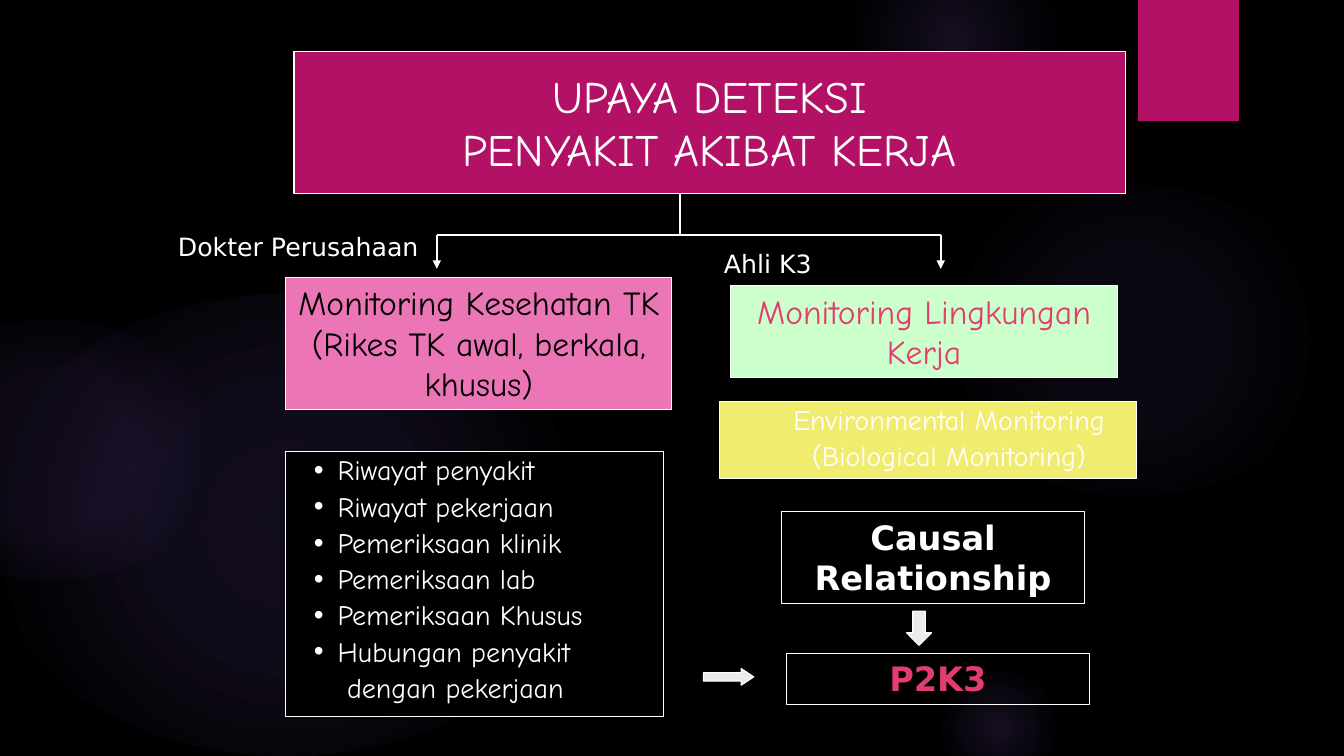
from dataclasses import dataclass
from pptx import Presentation
from pptx.dml.color import RGBColor as RGB
from pptx.enum.shapes import MSO_CONNECTOR as LINE, MSO_SHAPE as SHAPE
from pptx.enum.text import MSO_ANCHOR as ANCHOR, MSO_AUTO_SIZE as AUTO, PP_ALIGN as ALIGN
from pptx.oxml import parse_xml
from pptx.oxml.ns import nsdecls, qn
from pptx.util import Pt


@dataclass(frozen=True)
class Theme:
    black: str = "000000"
    white: str = "FFFFFF"
    glow: str = "9B6BF2"
    plum: str = "B31166"
    pink: str = "EC76B5"
    mint: str = "CCFFCC"
    lemon: str = "EFEC6F"
    rose: str = "E33D6F"
    gray: str = "EBEBEB"
    hand: str = "Comic Neue"
    sans: str = "DejaVu Sans"
    title: int = 32
    head: int = 24
    item: int = 20
    label: int = 18


def paint(shape, fill, line=None):
    if fill:
        shape.fill.solid()
        shape.fill.fore_color.rgb = RGB.from_string(fill)
    else:
        shape.fill.background()
    if line:
        shape.line.color.rgb = RGB.from_string(line)
        shape.line.width = Pt(0.75)
    else:
        shape.line.fill.background()


def write(shape, text, font, size, color, align=ALIGN.CENTER, bold=False, anchor=ANCHOR.TOP):
    frame = shape.text_frame
    frame.text = text
    frame.word_wrap = True
    frame.auto_size = AUTO.NONE
    frame.vertical_anchor = anchor
    for para in frame.paragraphs:
        para.alignment = align
        for run in para.runs:
            run.font.name = font
            run.font.size = Pt(size)
            run.font.bold = bold
            run.font.color.rgb = RGB.from_string(color)


theme = Theme()
deck = Presentation()
deck.slide_width, deck.slide_height = Pt(960), Pt(540)
slide = deck.slides.add_slide(deck.slide_layouts[1])
slide.background.fill.solid()
slide.background.fill.fore_color.rgb = RGB.from_string(theme.black)
shapes = slide.shapes

glows = [
    (661.5, 132, 296, 222, 7, 6, 69),
    (597.5, -36, 168, 126, 14, 7, 73),
    (661.5, 480, 104, 78, 14, 7, 66),
    (-16, 210, 440, 330, 11, 10, 75),
    (-88, 228, 248, 186, 8, 8, 72),
]
for left, top, width, height, core, mid, edge in glows:
    glow = shapes.add_shape(SHAPE.OVAL, Pt(left), Pt(top), Pt(width), Pt(height))
    glow.shadow.inherit = False
    paint(glow, None)
    stops = "".join(
        f'<a:gs pos="{pos * 1000}"><a:srgbClr val="{theme.glow}">'
        f'<a:alpha val="{alpha * 1000}"/></a:srgbClr></a:gs>'
        for pos, alpha in [(0, core), (36, mid), (edge, 0)]
    )
    grad = parse_xml(
        f'<a:gradFill {nsdecls("a")}><a:gsLst>{stops}</a:gsLst><a:path path="circle">'
        '<a:fillToRect l="50000" t="50000" r="50000" b="50000"/></a:path></a:gradFill>'
    )
    props = glow._element.spPr
    props.replace(props.find(qn("a:noFill")), grad)

tab = shapes.add_shape(SHAPE.RECTANGLE, Pt(813), 0, Pt(72), Pt(86.5))
tab.shadow.inherit = False
paint(tab, theme.plum)

title, body = shapes.title, slide.placeholders[1]
for holder, place in [(title, (210, 36.5, 594, 101.5)), (body, (204, 322.5, 270, 189))]:
    holder.left, holder.top, holder.width, holder.height = map(Pt, place)
    tab._element.getparent().append(holder._element)
paint(title, theme.plum, theme.white)
write(title, "UPAYA DETEKSI\vPENYAKIT AKIBAT KERJA", theme.hand, theme.title, theme.white,
      anchor=ANCHOR.MIDDLE)
paint(body, theme.black, theme.white)
items = ["Riwayat penyakit", "Riwayat pekerjaan", "Pemeriksaan klinik", "Pemeriksaan lab",
         "Pemeriksaan Khusus", "Hubungan penyakit", " dengan pekerjaan"]
write(body, "\n".join(items), theme.hand, theme.item, theme.white, ALIGN.LEFT)

boxes = [
    (204, 198, 276, 94.5, theme.pink, "Monitoring Kesehatan TK (Rikes TK awal, berkala, khusus)",
     theme.hand, theme.head, theme.black, False),
    (522, 204, 276, 65.5, theme.mint, "Monitoring Lingkungan Kerja",
     theme.hand, theme.head, theme.rose, False),
    (558.5, 365.5, 216, 65.5, None, "Causal Relationship",
     theme.sans, theme.head, theme.white, True),
    (562, 466.5, 216, 37, None, "P2K3", theme.sans, theme.head, theme.rose, True),
    (514, 286.5, 298, 55.5, theme.lemon, "Environmental Monitoring\n(Biological Monitoring)",
     theme.hand, theme.item, theme.white, False),
]
for left, top, width, height, fill, text, font, size, color, bold in boxes:
    box = shapes.add_shape(SHAPE.RECTANGLE, Pt(left), Pt(top), Pt(width), Pt(height))
    box.shadow.inherit = False
    paint(box, fill, theme.white)
    write(box, text, font, size, color, bold=bold)

for shape, hang in [(body, Pt(17)), (box, 0)]:
    for para in shape.text_frame.paragraphs:
        para.level = 1
        para.line_spacing = 0.9
        para.space_before = Pt(4.3)
        dot = hang and para.text in items[:-1]
        props = para._p.get_or_add_pPr()
        props.set("marL", str(Pt(30)))
        props.set("indent", str(-hang if dot else 0))
        mark = '<a:buChar {} char="•"/>' if dot else "<a:buNone {}/>"
        props.append(parse_xml(mark.format(nsdecls("a"))))

for left, top, text in [(120, 162, "Dokter Perusahaan"), (510, 174, "Ahli K3")]:
    label = shapes.add_textbox(Pt(left), Pt(top), Pt(204), Pt(29))
    write(label, text, theme.sans, theme.label, theme.white, ALIGN.LEFT)

links = [
    (312, 168, 672, 168, False),
    (312, 168, 312, 192, True),
    (672, 168, 672, 192, True),
    (486, 138, 486, 168, False),
]
for *ends, head in links:
    link = shapes.add_connector(LINE.STRAIGHT, *map(Pt, ends))
    link.line.color.rgb = RGB.from_string(theme.white)
    link.line.width = Pt(1.5)
    if head:
        link.line._get_or_add_ln().append(
            parse_xml(f'<a:tailEnd {nsdecls("a")} type="triangle"/>'))
    link._element.spPr.append(parse_xml(f'<a:effectLst {nsdecls("a")}/>'))

arrows = [
    (SHAPE.RIGHT_ARROW, 502.5, 477.5, 36, 12, 0.75),
    (SHAPE.DOWN_ARROW, 647.5, 436.5, 18, 24.5, 0.5),
]
for kind, left, top, width, height, tip in arrows:
    arrow = shapes.add_shape(kind, Pt(left), Pt(top), Pt(width), Pt(height))
    arrow.shadow.inherit = False
    arrow.adjustments[1] = tip
    paint(arrow, theme.gray, theme.white)

deck.save("out.pptx")
